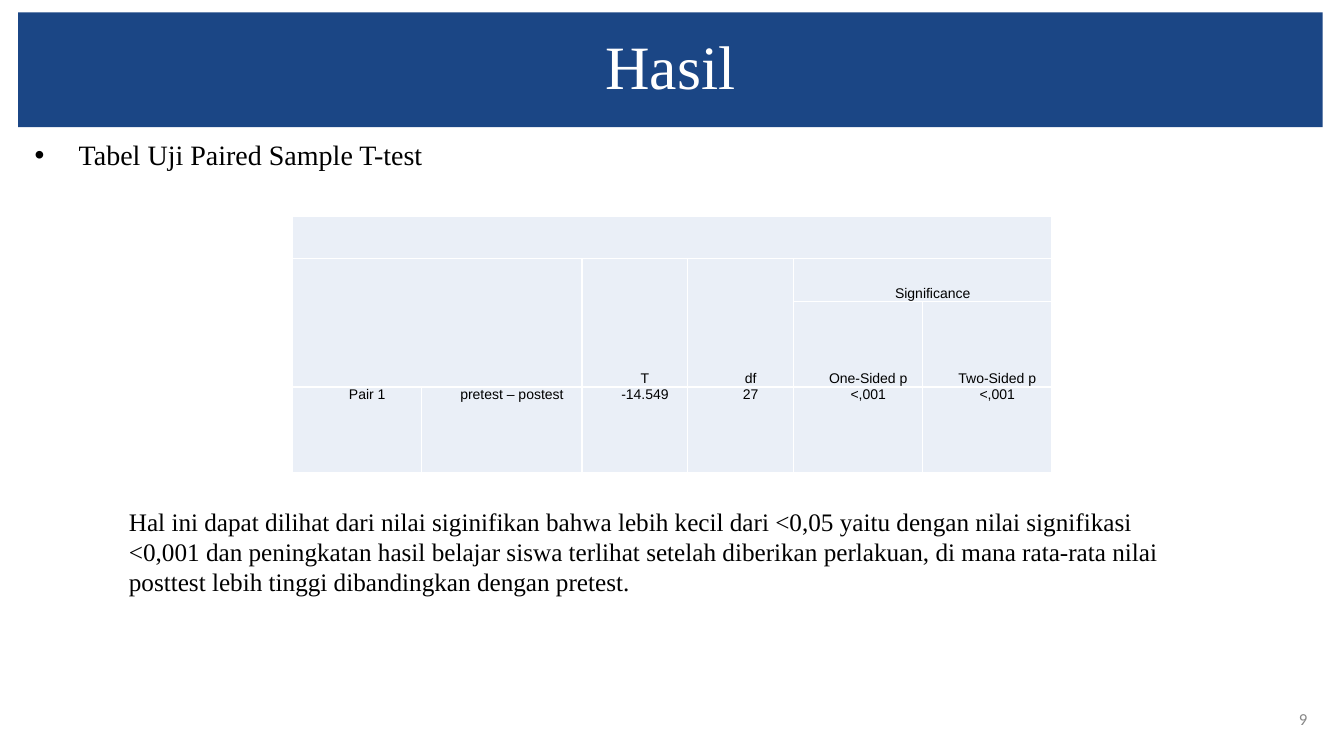
from lxml.etree import SubElement as add_element
from pptx import Presentation
from pptx.dml.color import RGBColor
from pptx.enum.text import MSO_ANCHOR as Anchor, MSO_AUTO_SIZE as AutoSize, PP_ALIGN as Align
from pptx.oxml.ns import qn
from pptx.util import Pt

SERIF = "Times New Roman"
COLUMN_WIDTHS = [92.2, 114.5, 75.6, 75.6, 92.2, 92.2]
ROW_HEIGHTS = [30.4, 30.4, 61.2, 61.2]
MERGES = [(0, 0, 0, 5), (1, 0, 2, 1), (1, 2, 2, 2), (1, 3, 2, 3), (1, 4, 1, 5)]
TABLE_ROWS = [
    ["", "", "", "", "", ""],
    ["", "", "T", "df", "Significance", ""],
    ["", "", "", "", "One-Sided p", "Two-Sided p"],
    ["Pair 1", "pretest – postest", "-14.549", "27", "<,001", "<,001"],
]
CONCLUSION = (
    "Hal ini dapat dilihat dari nilai siginifikan bahwa lebih kecil dari <0,05 yaitu "
    "dengan nilai signifikasi <0,001 dan peningkatan hasil belajar siswa terlihat setelah "
    "diberikan perlakuan, di mana rata-rata nilai posttest lebih tinggi dibandingkan "
    "dengan pretest."
)


def color(value):
    """Turn a hex string into a colour."""
    return RGBColor.from_string(value)


def place(shape, box):
    """Move a shape to a box of left, top, width and height in points."""
    shape.left, shape.top, shape.width, shape.height = map(Pt, box)


def style(paragraph, size, font_name, font_color="000000", align=Align.LEFT):
    """Set the font and alignment of a whole paragraph."""
    paragraph.alignment = align
    font = paragraph.font
    font.size, font.name = Pt(size), font_name
    font.color.rgb = color(font_color)


def fill_placeholder(shape, box, text, anchor):
    """Place a template placeholder and return its single paragraph."""
    place(shape, box)
    frame = shape.text_frame
    frame.text = text
    frame.auto_size = AutoSize.NONE
    frame.vertical_anchor = anchor
    paragraph = frame.paragraphs[0]
    paragraph.line_spacing = 0.9
    paragraph.space_before = Pt(0)
    return paragraph


def add_title(slide, box):
    """Show the title on a blue band."""
    title = slide.shapes.title
    paragraph = fill_placeholder(title, box, "Hasil", Anchor.MIDDLE)
    style(paragraph, 44, SERIF, "FFFFFF", Align.CENTER)
    title.fill.solid()
    title.fill.fore_color.rgb = color("1B4685")


def add_body(slide, box):
    """Show the bulleted heading of the table."""
    paragraph = fill_placeholder(
        slide.placeholders[1], box, "Tabel Uji Paired Sample T-test", Anchor.TOP)
    properties = paragraph._p.get_or_add_pPr()
    properties.set("marL", str(Pt(36)))
    properties.set("indent", str(-Pt(31.5)))
    bullet_color = add_element(properties, qn("a:buClr"))
    add_element(bullet_color, qn("a:srgbClr"), val="000000")
    add_element(properties, qn("a:buFont"), typeface="Arial")
    add_element(properties, qn("a:buChar"), char="•")
    style(paragraph, 20, SERIF)


def add_borders(cell):
    """Draw thin white lines around a table cell."""
    properties = cell._tc.get_or_add_tcPr()
    for side in ("lnL", "lnR", "lnT", "lnB"):
        line = add_element(properties, qn(f"a:{side}"), w=str(Pt(1)))
        line_fill = add_element(line, qn("a:solidFill"))
        add_element(line_fill, qn("a:srgbClr"), val="FFFFFF")


def format_cell(cell, text, anchor):
    """Write and format one table cell."""
    add_borders(cell)
    cell.fill.solid()
    cell.fill.fore_color.rgb = color("EAEFF7")
    cell.margin_left = cell.margin_right = Pt(0.7)
    cell.margin_top = cell.margin_bottom = Pt(0)
    cell.vertical_anchor = anchor
    cell.text = text
    paragraph = cell.text_frame.paragraphs[0]
    properties = paragraph._p.get_or_add_pPr()
    properties.set("marL", str(Pt(7.2)))
    properties.set("indent", str(Pt(7.2)))
    paragraph.space_after = Pt(4.3)
    style(paragraph, 10, "Arial", align=Align.CENTER)


def add_test_table(slide, left, top):
    """Build the paired sample test table."""
    table = slide.shapes.add_table(
        len(ROW_HEIGHTS), len(COLUMN_WIDTHS), Pt(left), Pt(top),
        Pt(sum(COLUMN_WIDTHS)), Pt(sum(ROW_HEIGHTS))).table
    table.first_row = table.horz_banding = False
    for column, width in zip(table.columns, COLUMN_WIDTHS):
        column.width = Pt(width)
    for row, height, texts in zip(table.rows, ROW_HEIGHTS, TABLE_ROWS):
        row.height = Pt(height)
        anchor = Anchor.TOP if texts is TABLE_ROWS[-1] else Anchor.BOTTOM
        for cell, text in zip(row.cells, texts):
            format_cell(cell, text, anchor)
    for top_row, first_column, bottom_row, last_column in MERGES:
        table.cell(top_row, first_column).merge(table.cell(bottom_row, last_column))


def add_text(slide, box, text, anchor=Anchor.TOP):
    """Add a wrapping text box and return its paragraph."""
    frame = slide.shapes.add_textbox(*map(Pt, box)).text_frame
    frame.word_wrap = True
    frame.vertical_anchor = anchor
    frame.text = text
    return frame.paragraphs[0]


def add_conclusion(slide, box):
    """Explain the result below the table."""
    style(add_text(slide, box, CONCLUSION), 18, SERIF)


def add_slide_number(slide, box):
    """Show the slide number in the corner."""
    style(add_text(slide, box, "9", Anchor.MIDDLE), 12, "Calibri", "888888", Align.RIGHT)


def main():
    """Build and save the presentation."""
    presentation = Presentation()
    presentation.slide_width, presentation.slide_height = Pt(960), Pt(540)
    slide = presentation.slides.add_slide(presentation.slide_layouts[1])
    add_slide_number(slide, (900, 499, 41, 28.8))
    add_title(slide, (13, 8.8, 931.7, 82))
    add_body(slide, (13, 97.2, 931.7, 401))
    add_test_table(slide, 209, 154.4)
    add_conclusion(slide, (85, 358, 773, 72.7))
    presentation.save("out.pptx")


if __name__ == "__main__":
    main()
